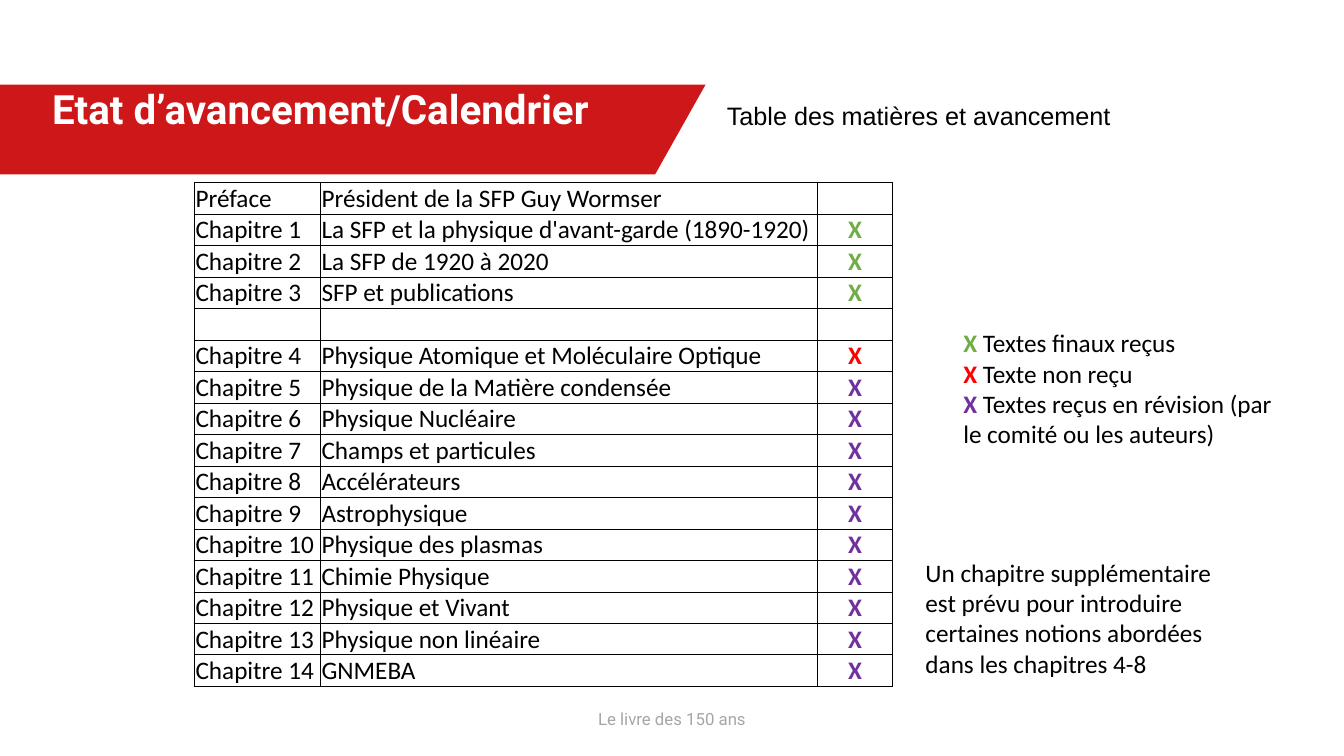
from lxml import etree
from pptx import Presentation
from pptx.dml.color import RGBColor
from pptx.enum.text import MSO_ANCHOR, MSO_AUTO_SIZE, PP_ALIGN
from pptx.oxml.ns import qn
from pptx.util import Pt

LEFT, CENTER, JUSTIFY = PP_ALIGN.LEFT, PP_ALIGN.CENTER, PP_ALIGN.JUSTIFY
TOP, BOTTOM = MSO_ANCHOR.TOP, MSO_ANCHOR.BOTTOM
NO_AUTOFIT = MSO_AUTO_SIZE.NONE

RED_BANNER = RGBColor(0xCD, 0x17, 0x19)
WHITE = RGBColor(0xFF, 0xFF, 0xFF)
BLACK = RGBColor(0, 0, 0)
GREY = RGBColor(0xA6, 0xA6, 0xA6)
FINAL = RGBColor(0x70, 0xAD, 0x47)
MISSING = RGBColor(0xFF, 0, 0)
REVISION = RGBColor(0x70, 0x30, 0xA0)

BODY = {"name": "Calibri", "size": Pt(18), "bold": False}

# Title of each chapter and colour of its status mark
GROUPS = [
    [("La SFP et la physique d'avant-garde (1890-1920)", FINAL),
     ("La SFP de 1920 à 2020", FINAL),
     ("SFP et publications", FINAL)],
    [("Physique Atomique et Moléculaire Optique", MISSING),
     ("Physique de la Matière condensée", REVISION),
     ("Physique Nucléaire", REVISION),
     ("Champs et particules", REVISION),
     ("Accélérateurs", REVISION),
     ("Astrophysique", REVISION),
     ("Physique des plasmas", REVISION),
     ("Chimie Physique", REVISION),
     ("Physique et Vivant", REVISION),
     ("Physique non linéaire", REVISION),
     ("GNMEBA", REVISION)],
]
LEGEND = [
    (FINAL, "Textes finaux reçus"),
    (MISSING, "Texte non reçu"),
    (REVISION, "Textes reçus en révision (par le comité ou les auteurs)"),
]
NOTE = ("Un chapitre supplémentaire est prévu pour introduire certaines "
        "notions abordées dans les chapitres 4-8")


def add_run(p, text, color, **changes):
    r = p.add_run()
    r.text = text
    for key, value in {**BODY, **changes}.items():
        setattr(r.font, key, value)
    r.font.color.rgb = color


def fill_placeholder(sp, box, text, color, align, **font):
    sp.left, sp.top, sp.width, sp.height = map(Pt, box)
    tf = sp.text_frame
    tf.word_wrap = True
    tf.auto_size = NO_AUTOFIT
    tf.vertical_anchor = TOP
    p = tf.paragraphs[0]
    pPr = p._p.get_or_add_pPr()
    pPr.set("marL", "0")
    pPr.set("indent", "0")
    etree.SubElement(pPr, qn("a:buNone"))
    for key, value in {"alignment": align, "line_spacing": 0.9,
                       "space_before": Pt(0)}.items():
        setattr(p, key, value)
    add_run(p, text, color, **font)


def add_banner(s, x, y, w, h):
    slant = 36
    builder = s.shapes.build_freeform(Pt(x), Pt(y))
    builder.add_line_segments([(Pt(x + w), Pt(y)),
                               (Pt(x + w - slant), Pt(y + h)),
                               (Pt(x), Pt(y + h))])
    sp = builder.convert_to_shape()
    sp.shadow.inherit = False
    sp.fill.solid()
    sp.fill.fore_color.rgb = RED_BANNER
    sp.line.fill.background()
    # The banner lies behind the title
    s.shapes.title.element.addprevious(sp.element)


def format_cell(cell):
    for key, value in {"margin_left": Pt(0.7), "margin_right": Pt(0.7),
                       "margin_top": Pt(0.5), "margin_bottom": Pt(0),
                       "vertical_anchor": BOTTOM}.items():
        setattr(cell, key, value)
    cell.fill.background()
    tcPr = cell._tc.get_or_add_tcPr()
    for i, side in enumerate("LRTB"):
        ln = etree.Element(qn(f"a:ln{side}"), w=str(Pt(0.5)))
        fill = etree.SubElement(ln, qn("a:solidFill"))
        etree.SubElement(fill, qn("a:srgbClr"), val=str(BLACK))
        tcPr.insert(i, ln)


def add_chapters(s, x, y, widths, row_h):
    rows = [("Préface", "Président de la SFP Guy Wormser", None)]
    number = 0
    for group in GROUPS:
        if number:
            rows.append(("", "", None))
        for title, status in group:
            number += 1
            rows.append((f"Chapitre {number}", title, status))

    table = s.shapes.add_table(len(rows), len(widths), Pt(x), Pt(y),
                               Pt(sum(widths)), Pt(row_h * len(rows))).table
    table.first_row = table.horz_banding = False
    for col, width in zip(table.columns, widths):
        col.width = Pt(width)
    for i, (label, title, status) in enumerate(rows):
        table.rows[i].height = Pt(row_h)
        cells = table.rows[i].cells
        for cell in cells:
            format_cell(cell)
        for cell, text in zip(cells, (label, title)):
            if text:
                add_run(cell.text_frame.paragraphs[0], text, BLACK)
        if status:
            p = cells[2].text_frame.paragraphs[0]
            p.alignment = CENTER
            add_run(p, "X", status, bold=True)


def add_text_box(s, x, y, w, h):
    tf = s.shapes.add_textbox(Pt(x), Pt(y), Pt(w), Pt(h)).text_frame
    tf.word_wrap = True
    return tf


def add_legend(s, x, y, w, h):
    tf = add_text_box(s, x, y, w, h)
    for i, (color, text) in enumerate(LEGEND):
        p = tf.add_paragraph() if i else tf.paragraphs[0]
        add_run(p, "X ", color, bold=True)
        add_run(p, text, BLACK)


def add_note(s, x, y, w, h):
    add_run(add_text_box(s, x, y, w, h).paragraphs[0], NOTE, BLACK)


def main():
    prs = Presentation()
    prs.slide_width, prs.slide_height = Pt(960), Pt(540)
    s = prs.slides.add_slide(prs.slide_layouts[3])
    title, footer, subtitle = s.placeholders

    # Header and footer
    add_banner(s, 0, 60.5, 504, 64)
    fill_placeholder(title, (30, 60.5, 463, 40), "Etat d’avancement/Calendrier",
                     WHITE, LEFT, name="Roboto", size=Pt(28.8), bold=True)
    fill_placeholder(footer, (0, 504.5, 960, 35), "Le livre des 150 ans",
                     GREY, CENTER, name="Roboto", size=Pt(12))
    fill_placeholder(subtitle, (512, 70.5, 440, 35),
                     "Table des matières et avancement",
                     BLACK, JUSTIFY, name="Arial")

    # Contents with progress
    add_chapters(s, 139, 130.5, (90, 355, 53.5), 22.45)

    # Key and remark
    add_legend(s, 681, 230.5, 235, 94)
    add_note(s, 654, 394.5, 235, 94)

    prs.save("out.pptx")


if __name__ == "__main__":
    main()
